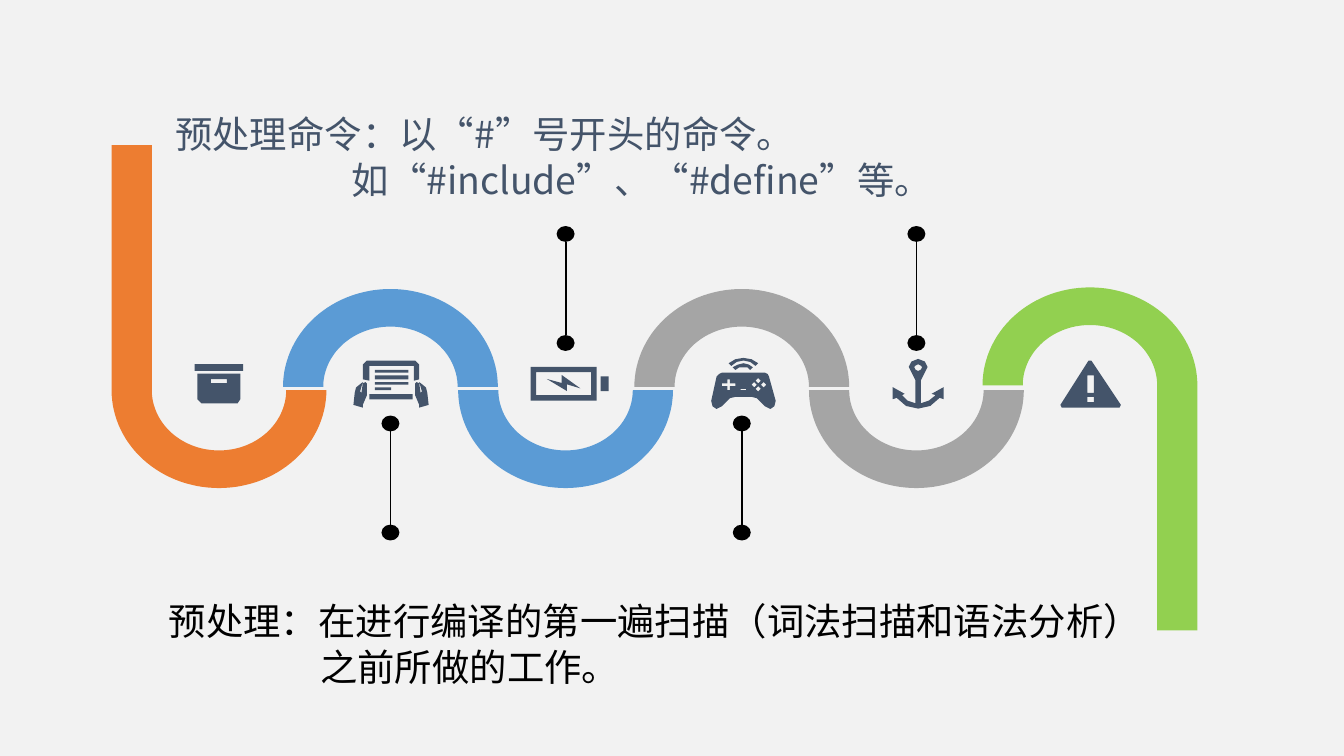
"""Build a slide with a winding ribbon that explains preprocessing commands."""
import math

from lxml import etree
from pptx import Presentation
from pptx.dml.color import RGBColor
from pptx.enum.lang import MSO_LANGUAGE_ID
from pptx.enum.shapes import MSO_CONNECTOR, MSO_SHAPE
from pptx.oxml.ns import qn
from pptx.util import Cm, Pt

ELLIPSE = MSO_SHAPE.OVAL
STRAIGHT = MSO_CONNECTOR.STRAIGHT
CHINESE = MSO_LANGUAGE_ID.SIMPLIFIED_CHINESE
CJK_FONT = "Noto Sans CJK SC"
COLORS = {
    "background": "F2F2F2",
    "orange": "ED7D31",
    "blue": "5B9BD5",
    "gray": "A5A5A5",
    "green": "92D050",
    "slate": "44546A",
    "black": "000000",
}

presentation = Presentation()
presentation.slide_width = Cm(25.4)
presentation.slide_height = Cm(14.28)
slide = presentation.slides.add_slide(presentation.slide_layouts[6])
slide.background.fill.solid()
slide.background.fill.fore_color.rgb = RGBColor.from_string(COLORS["background"])


def draw(contours, color, left=0, top=0, unit=Cm(1)):
    """Draw closed contours as one filled outline."""
    placed = [[(left + x * unit, top + y * unit) for x, y in contour] for contour in contours]
    builder = slide.shapes.build_freeform(*placed[0][0])
    builder.add_line_segments(placed[0][1:], close=True)
    for contour in placed[1:]:
        builder.move_to(*contour[0])
        builder.add_line_segments(contour[1:], close=True)
    shape = builder.convert_to_shape()
    shape.shadow.inherit = False
    shape.fill.solid()
    shape.fill.fore_color.rgb = RGBColor.from_string(COLORS[color])
    shape.line.fill.background()


def box(left, top, right, bottom):
    """Return the corners of a rectangle."""
    return [(left, top), (right, top), (right, bottom), (left, bottom)]


centers = [4.14, 7.38, 10.69, 14.02, 17.32, 20.6]
ribbons = [
    ("orange", 7.37, 2.74),
    ("blue", 7.31, 7.31),
    ("blue", 7.37, 7.37),
    ("gray", 7.31, 7.31),
    ("gray", 7.37, 7.37),
    ("green", 7.28, 11.91),
]
angles = [math.radians(degree) for degree in range(0, 181, 3)]
for index, (center, (color, base, arm_end)) in enumerate(zip(centers, ribbons)):
    turn = -1 if index % 2 else 1
    outer, inner = [
        [(center + turn * width * math.cos(angle), base + turn * height * math.sin(angle)) for angle in angles]
        for width, height in [(2.03, 1.85), (1.27, 1.14)]
    ]
    arm = [(outer[-1][0], arm_end), (inner[-1][0], arm_end)]
    draw([outer + arm + inner[::-1]], color)

archive = [
    box(0, 0, 36, 5),
    [(2, 7), (34, 7), (34, 26), (32, 29), (5, 29), (2, 26)],
    box(12, 11, 24, 14),
]
left_hand = [(5, 23), (6, 24), (7, 17), (9, 16), (10, 17), (10, 26),
             (7, 33), (7, 35), (0, 33), (1, 24), (2, 20), (7, 16)]
tablet = [
    left_hand,
    [(56 - x, y) for x, y in left_hand],
    [(12, 15), (12, 4), (45, 4), (45, 15), (49, 14), (49, 3), (46, 0), (10, 0), (7, 3), (7, 14)],
    box(12, 25, 44, 29),
    box(16, 7, 41, 9),
    box(16, 11, 41, 14),
    box(16, 16, 41, 18),
    box(16, 20, 28, 22),
]
battery = [
    box(0, 0, 49, 25),
    box(4, 4, 45, 21),
    box(52, 7, 58, 18),
    [(12, 9), (27, 18), (27, 13), (37, 16), (23, 6), (23, 12)],
]
gamepad = [
    [(50, 32), (45, 14), (44, 12), (42, 11), (10, 11), (8, 12), (6, 14), (2, 32), (3, 36),
     (6, 38), (10, 36), (16, 30), (20, 29), (32, 29), (36, 30), (42, 36), (46, 38), (49, 36)],
    [(20, 21), (16, 21), (16, 24), (14, 24), (14, 21), (10, 21),
     (10, 19), (14, 19), (14, 16), (16, 16), (16, 19), (20, 19)],
    box(24, 23, 28, 24),
    [(15, 4), (20, 1), (26, 0), (32, 1), (37, 4), (35, 6), (31, 3), (26, 2), (21, 3), (17, 6)],
    [(20, 9), (23, 7), (29, 7), (31, 9), (33, 7), (30, 5), (26, 4), (22, 5), (18, 7)],
]
for x, y in [(34, 20), (37, 23), (37, 17), (41, 20)]:
    gamepad.append([(x - 2, y), (x, y - 2), (x + 2, y), (x, y + 2)])
anchor = [
    [(38, 21), (29, 26), (32, 27), (27, 31), (21, 33), (21, 16), (23, 12), (26, 6), (24, 2),
     (19, 0), (14, 2), (12, 6), (15, 12), (17, 16), (17, 33), (11, 31), (7, 27), (9, 26),
     (0, 21), (0, 30), (3, 29), (10, 35), (19, 37), (28, 35), (35, 29), (38, 30)],
    [(16, 6), (17, 5), (19, 4), (21, 5), (22, 6), (21, 8), (19, 9), (17, 8)],
]
warning = [
    [(21, 0), (23, 0), (45, 33), (44, 35), (1, 35), (0, 33)],
    box(20, 11, 25, 24),
    box(20, 27, 25, 31),
]
icons = [
    (archive, 3.68, 6.88),
    (tablet, 6.68, 6.81),
    (battery, 10.03, 6.93),
    (gamepad, 13.39, 6.76),
    (anchor, 16.87, 6.78),
    (warning, 20.04, 6.81),
]
for contours, left, top in icons:
    draw(contours, "slate", Cm(left), Cm(top), Cm(2.54) / 100)

for index, center in enumerate(centers[1:5]):
    top = 4.27 if index % 2 else 7.85
    for dot_top in (top, top + 2.06):
        dot = slide.shapes.add_shape(ELLIPSE, Cm(center - 0.17), Cm(dot_top), Cm(0.34), Cm(0.3))
        dot.shadow.inherit = False
        dot.fill.solid()
        dot.fill.fore_color.rgb = RGBColor.from_string(COLORS["black"])
        dot.line.fill.background()
    stem = slide.shapes.add_connector(STRAIGHT, Cm(center), Cm(top + 0.3), Cm(center), Cm(top + 2.06))
    stem.line.color.rgb = RGBColor.from_string(COLORS["black"])
    stem.line.width = Pt(1)
    etree.SubElement(stem._element.spPr, qn("a:effectLst"))

texts = [
    (2.03, 11.15, 20.07, "Calibri", "black", [
        (0.91, "预处理：在进行编译的第一遍扫描（词法扫描和语法分析）"),
        (3.77, "之前所做的工作。"),
    ]),
    (2.95, 1.95, 19.96, CJK_FONT, "slate", [
        (0.11, "预处理命令：以“#”号开头的命令。"),
        (3.45, "如“#include”、“#define”等。"),
    ]),
]
for left, top, width, font_name, color, lines in texts:
    text_box = slide.shapes.add_textbox(Cm(left), Cm(top), Cm(width), Cm(1.96))
    frame = text_box.text_frame
    frame.word_wrap = True
    for index, (indent, text) in enumerate(lines):
        paragraph = frame.add_paragraph() if index else frame.paragraphs[0]
        paragraph.line_spacing = Pt(24.6)
        paragraph._p.get_or_add_pPr().set("marL", str(Cm(indent)))
        run = paragraph.add_run()
        run.text = text
        run.font.size = Pt(20)
        run.font.name = font_name
        run.font.language_id = CHINESE
        run.font.color.rgb = RGBColor.from_string(COLORS[color])
        etree.SubElement(run._r.get_or_add_rPr(), qn("a:ea")).set("typeface", CJK_FONT)

presentation.save("out.pptx")
